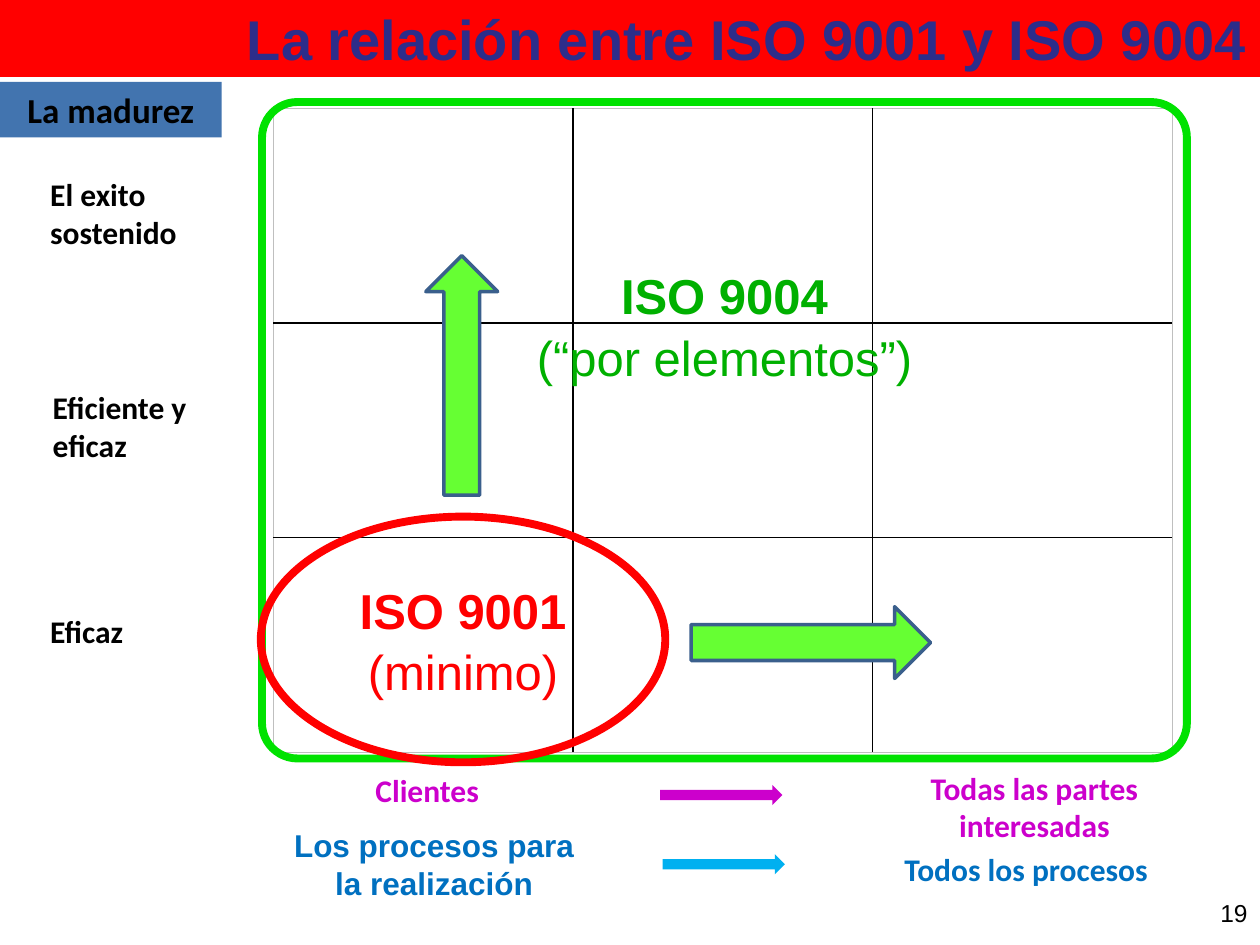
from pptx import Presentation
from pptx.dml.color import RGBColor as Rgb
from pptx.enum.shapes import MSO_SHAPE as Kind
from pptx.enum.text import MSO_ANCHOR as Anchor, MSO_AUTO_SIZE as Fit, PP_ALIGN as Align
from pptx.oxml.ns import qn
from pptx.util import Inches, Pt
from lxml.etree import SubElement

BLACK = Rgb(0x00, 0x00, 0x00)
GRAY = Rgb(0xBF, 0xBF, 0xBF)
RED = Rgb(0xFF, 0x00, 0x00)
NAVY = Rgb(0x2D, 0x2D, 0x8A)
STEEL = Rgb(0x42, 0x74, 0xAF)
EDGE = Rgb(0x3A, 0x5F, 0x8C)
FRAME = Rgb(0x00, 0xE2, 0x00)
GREEN = Rgb(0x00, 0xB0, 0x00)
LIME = Rgb(0x66, 0xFF, 0x33)
PINK = Rgb(0xCC, 0x00, 0xCC)
BLUE = Rgb(0x00, 0x70, 0xC0)
SKY = Rgb(0x00, 0xB0, 0xF0)

COLS, ROWS = 100, 75


class Board:
    base = {"name": "Calibri", "size": Pt(18), "bold": True}

    def __init__(self, wide, high):
        self.deck = Presentation()
        self.deck.slide_width, self.deck.slide_height = wide, high
        self.slide = self.deck.slides.add_slide(self.deck.slide_layouts[5])
        self.shapes = self.slide.shapes
        self.col, self.row = wide / COLS, high / ROWS

    def area(self, box):
        return [round(n * step) for n, step in zip(box, (self.col, self.row) * 2)]

    def letter(self, shape, text, color, align=Align.CENTER, frame=None, plain=None, space=None, **font):
        body = shape.text_frame
        for key, value in (frame or {}).items():
            setattr(body, key, value)
        para = body.paragraphs[0]
        para.alignment = align
        if space:
            para.line_spacing = space
        for num, line in enumerate(text.split("\n")):
            if num:
                para.add_line_break()
            run = para.add_run()
            run.text = line
            look = {**self.base, **font}
            if num == plain:
                look["bold"] = False
            for key, value in look.items():
                setattr(run.font, key, value)
            run.font.color.rgb = color

    def title(self, box, text, fill, color):
        head = self.shapes.title
        head.left, head.top, head.width, head.height = self.area(box)
        head.fill.solid()
        head.fill.fore_color.rgb = fill
        frame = {"vertical_anchor": Anchor.MIDDLE, "word_wrap": True, "auto_size": Fit.NONE}
        self.letter(head, text, color, Align.RIGHT, frame, name="Arial", size=Pt(32))

    def shape(self, kind, box, fill=None, line=None, width=2, turn=0):
        item = self.shapes.add_shape(kind, *self.area(box))
        item.shadow.inherit = False
        item.rotation = turn
        if fill is None:
            item.fill.background()
        else:
            item.fill.solid()
            item.fill.fore_color.rgb = fill
        if line is None:
            item.line.fill.background()
        else:
            item.line.color.rgb = line
            item.line.width = Pt(width)
        return item

    def label(self, box, text, color=BLACK, align=Align.CENTER, frame=None, **font):
        item = self.shapes.add_textbox(*self.area(box))
        frame = frame or {"word_wrap": False, "auto_size": Fit.SHAPE_TO_FIT_TEXT}
        self.letter(item, text, color, align, frame, **font)

    def border(self, cell, side, color, width):
        line = SubElement(cell._tc.get_or_add_tcPr(), qn("a:" + side), w=str(Pt(width)))
        SubElement(SubElement(line, qn("a:solidFill")), qn("a:srgbClr"), val=str(color))

    def grid(self, box, count):
        table = self.shapes.add_table(count, count, *self.area(box)).table
        table.first_row = table.horz_banding = False
        last = count - 1
        for r in range(count):
            for c in range(count):
                cell = table.cell(r, c)
                rims = {"lnL": c == 0, "lnR": c == last, "lnT": r == 0, "lnB": r == last}
                for side, rim in rims.items():
                    self.border(cell, side, GRAY if rim else BLACK, 0.25 if rim else 1)
                cell.fill.background()

    def save(self):
        self.deck.save("out.pptx")


def main():
    board = Board(Inches(10), Inches(7.5))
    board.title((0, 0, 100, 6.1), "La relación entre ISO 9001 y ISO 9004", RED, NAVY)
    board.grid((21.7, 8.6, 71.3, 51.1), 3)

    tag = board.shape(Kind.RECTANGLE, (0, 6.5, 17.6, 4.4), STEEL)
    board.letter(tag, "La madurez", BLACK, frame={"word_wrap": False}, size=Pt(20))

    big = {"name": "Arial", "size": Pt(28), "plain": 1, "space": 1.04}
    outer = board.shape(Kind.ROUNDED_RECTANGLE, (20.8, 8.1, 73.4, 52.1), line=FRAME, width=4.5)
    outer.adjustments[0] = 0.054
    top = {"vertical_anchor": Anchor.TOP, "margin_top": Inches(1.2)}
    board.letter(outer, "ISO 9004\n(“por elementos”)", GREEN, frame=top, **big)

    for left, y, turn in ((33.8, 20.3, 0), (61.5, 41.5, 90)):
        board.shape(Kind.UP_ARROW, (left, y, 5.7, 19), LIME, EDGE, turn=turn)

    for box, text in (
        ((3, 13.4, 13.9, 7.1), "El exito\nsostenido"),
        ((3.2, 30.3, 15.3, 7.1), "Eficiente y \neficaz"),
        ((3, 48.1, 9.3, 4), "Eficaz"),
    ):
        board.label(box, text, align=Align.LEFT)

    for box, text, color, name in (
        ((28, 60.7, 11.8, 4), "Clientes", PINK, "Calibri"),
        ((71.2, 60.5, 21.8, 7.1), "Todas las partes\ninteresadas", PINK, "Calibri"),
        ((68.6, 67, 25.7, 4), "Todos los procesos", BLUE, "Calibri"),
        ((22.2, 65.1, 24.5, 7.1), "Los procesos para\nla realización", BLUE, "Arial"),
    ):
        board.label(box, text, color, name=name)

    core = board.shape(Kind.OVAL, (20.7, 41, 32.1, 19.5), line=RED, width=4.5)
    board.letter(core, "ISO 9001\n(minimo)", RED, frame={"vertical_anchor": Anchor.MIDDLE}, **big)

    for left, y, color in ((52.4, 62.3, PINK), (52.6, 67.8, SKY)):
        board.shape(Kind.RIGHT_ARROW, (left, y, 9.7, 1.6), color)

    foot = {"word_wrap": True, "vertical_anchor": Anchor.MIDDLE}
    board.label((76.7, 69.8, 23.3, 5.2), "19", align=Align.RIGHT, frame=foot,
                name="Arial", size=Pt(14), bold=False)
    board.save()


if __name__ == "__main__":
    main()
